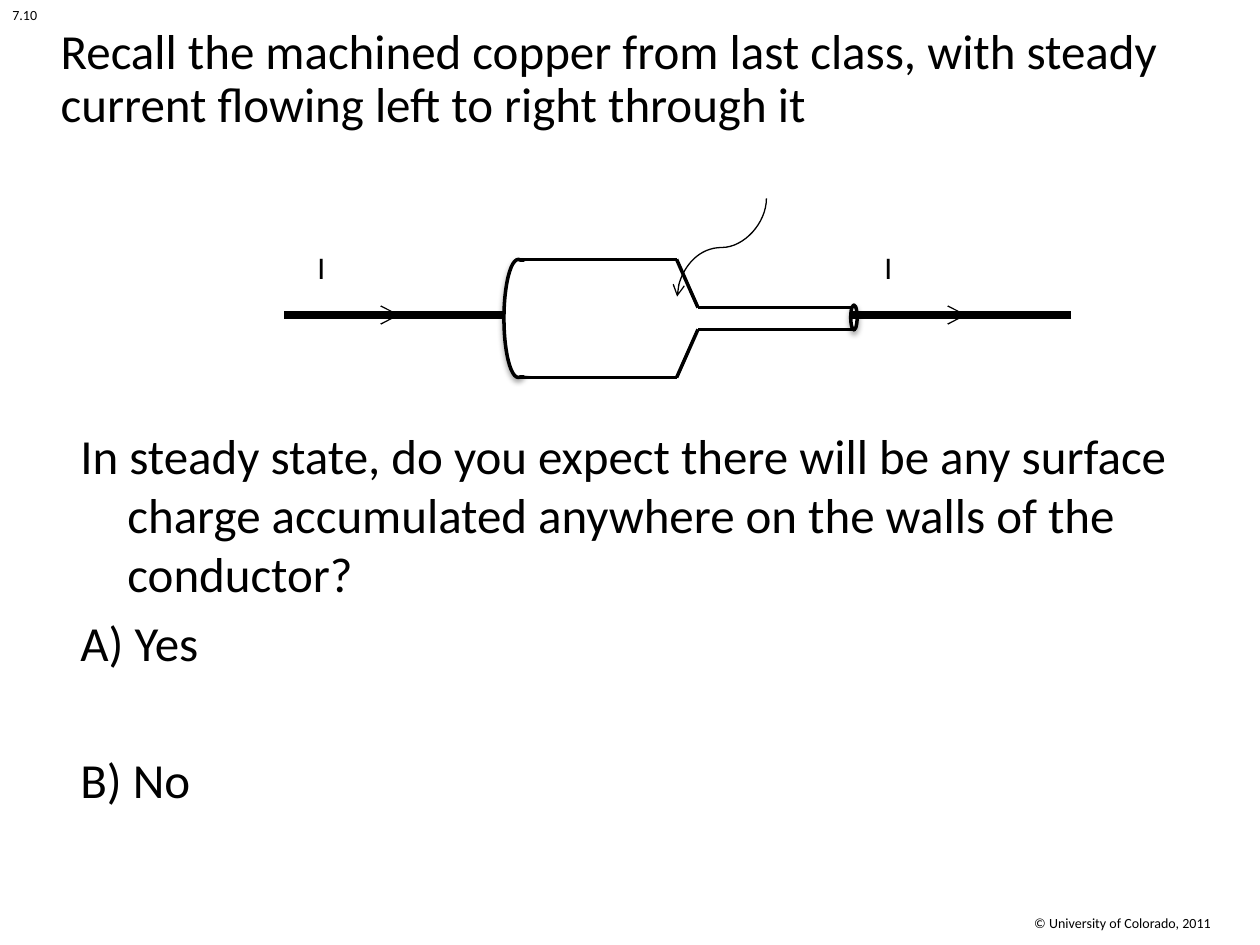
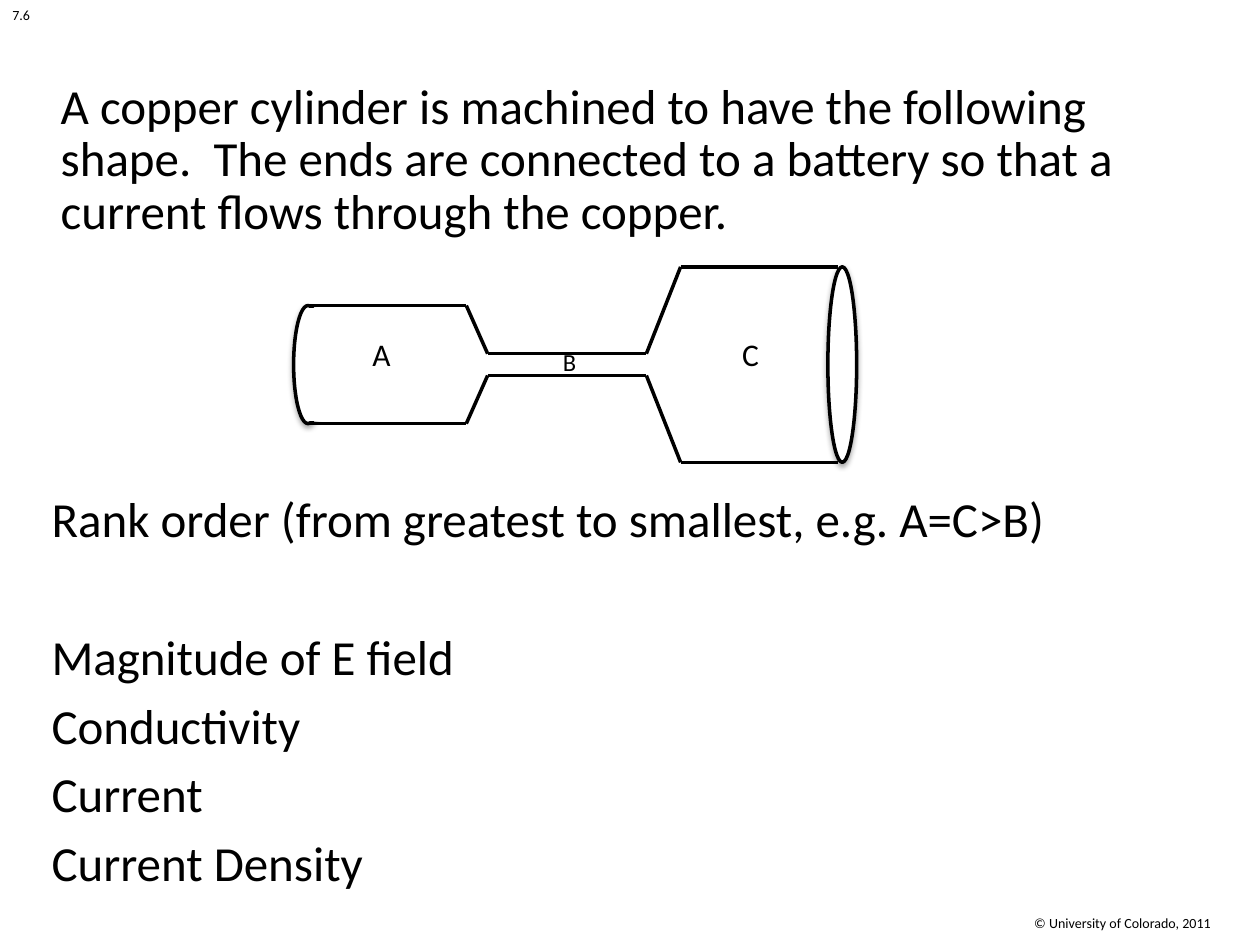
"""Build two physics question slides about current in a machined copper conductor."""
from lxml.etree import SubElement
from pptx import Presentation
from pptx.dml.color import RGBColor
from pptx.enum.shapes import MSO_CONNECTOR, MSO_SHAPE
from pptx.enum.text import MSO_ANCHOR, MSO_AUTO_SIZE, PP_ALIGN
from pptx.oxml.ns import qn
from pptx.util import Cm, Pt

COLORS = {"ink": "000000", "paper": "FFFFFF"}
FONT = "Calibri"
WIDE, NARROW = 1.19, 0.22


def color(name):
    return RGBColor.from_string(COLORS[name])


class Deck:
    def __init__(self):
        self.prs = Presentation()
        self.prs.slide_width, self.prs.slide_height = Cm(25.4), Cm(19.05)

    def page(self, number, title, top):
        self.slide = self.prs.slides.add_slide(self.prs.slide_layouts[5])
        head = self.slide.shapes.title
        head.left, head.top, head.width, head.height = Cm(0.97), Cm(top), Cm(23.5), Cm(2.49)
        frame = head.text_frame
        frame.word_wrap, frame.auto_size = True, MSO_AUTO_SIZE.NONE
        frame.vertical_anchor = MSO_ANCHOR.TOP
        frame.text = title
        para = frame.paragraphs[0]
        para.alignment, para.line_spacing = PP_ALIGN.LEFT, 0.9
        para.space_before = Pt(5.6)
        self.style(para, 28)
        self.text(number, 0, 0, 1.5, 0.61, 8)
        self.text("© University of Colorado, 2011", 20.6, 18.31, 4.8, 0.61, 8)

    def style(self, para, size):
        font = para.font
        font.name, font.size, font.bold = FONT, Pt(size), False
        font.color.rgb = color("ink")

    def text(self, words, x, y, w, h, size):
        frame = self.slide.shapes.add_textbox(Cm(x), Cm(y), Cm(w), Cm(h)).text_frame
        frame.word_wrap = True
        frame.text = words
        for para in frame.paragraphs:
            self.style(para, size)
        return frame

    def body(self, lines, x, y, w, gap):
        frame = self.text("\n".join(lines), x, y, w, 8.81, 28)
        for i, para in enumerate(frame.paragraphs):
            para.space_before = Pt(45 if i == gap else 5.6)
            props = para._p.get_or_add_pPr()
            props.set("marL", str(Cm(0.95)))
            props.set("indent", str(-Cm(0.95)))

    def line(self, x1, y1, x2, y2, width=2, tip=None, kind=MSO_CONNECTOR.STRAIGHT):
        link = self.slide.shapes.add_connector(kind, Cm(x1), Cm(y1), Cm(x2), Cm(y2))
        link.line.width = Pt(width)
        link.line.color.rgb = color("ink")
        props = link._element.spPr
        if tip:
            SubElement(props.find(qn("a:ln")), qn("a:tailEnd"), type="arrow", w=tip, len=tip)
        SubElement(props, qn("a:effectLst"))
        return props

    def curve(self, x1, y1, x2, y2):
        props = self.line(x1, y1, x2, y2, 0.75, "med", MSO_CONNECTOR.CURVE)
        props.find(qn("a:xfrm")).set("rot", str(90 * 60000))

    def shape(self, kind, x, y, w, h, edge, width):
        form = self.slide.shapes.add_shape(kind, Cm(x), Cm(y), Cm(w), Cm(h))
        form.fill.solid()
        form.fill.fore_color.rgb = color("paper")
        form.line.color.rgb = color(edge)
        form.line.width = Pt(width)
        form.shadow.inherit = False
        return form

    def cap(self, x, mid, w, r):
        oval = self.shape(MSO_SHAPE.OVAL, x, mid - r, w, 2 * r, "ink", 2)
        glow = SubElement(
            oval._element.spPr.find(qn("a:effectLst")), qn("a:outerShdw"),
            blurRad=str(Pt(3.1)), dist=str(Pt(1.8)), dir=str(90 * 60000), rotWithShape="0")
        tint = SubElement(glow, qn("a:srgbClr"), val=COLORS["ink"])
        SubElement(tint, qn("a:alpha"), val="35000")

    def pipe(self, mid, points):
        for side in (1, -1):
            for (x1, r1), (x2, r2) in zip(points, points[1:]):
                self.line(x1, mid + side * r1, x2, mid + side * r2)
        x, r = points[0]
        self.cap(x - 0.28, mid, 0.58, r)
        self.shape(MSO_SHAPE.RECTANGLE, x, mid - r + 0.06, 0.66, 2 * r - 0.12, "paper", 0.75)


def charge(deck):
    deck.page("7.10", "Recall the machined copper from last class, with steady "
              "current flowing left to right through it", 0.43)
    deck.body(["In steady state, do you expect there will be any surface charge "
               "accumulated anywhere on the walls of the conductor?",
               "A) Yes", "B) No"], 1.37, 8.46, 23.09, gap=2)
    deck.pipe(6.42, [(10.44, WIDE), (13.64, WIDE), (14.07, NARROW), (17.25, NARROW)])
    deck.cap(17.15, 6.4, 0.13, 0.25)
    deck.curve(13.56, 4.09, 15.54, 5.89)
    for shift in (0, 11.43):
        deck.line(10.16 + shift, 6.35, 5.72 + shift, 6.35, 5)
        deck.text("I", 6.15 + shift, 4.88, 0.89, 1.02, 18)
        deck.line(5.92 + shift, 6.35, 8.05 + shift, 6.35, 0.75, "lg")


def rank(deck):
    deck.page("7.6", "A copper cylinder is machined to have the following shape.  The ends "
              "are connected to a battery so that a current flows through the copper.", 1.52)
    deck.body(["Rank order (from greatest to smallest, e.g. A=C>B)", "Magnitude of E field",
               "Conductivity", "Current", "Current Density"], 0.79, 9.73, 24.56, gap=1)
    mid, large = 7.35, 1.97
    deck.pipe(mid, [(6.2, WIDE), (9.4, WIDE), (9.83, NARROW), (13.03, NARROW),
                    (13.72, large), (16.89, large)])
    deck.cap(16.69, mid, 0.58, large)
    for name, x, y, size in (("A", 7.26, 6.63, 18), ("C", 14.71, 6.63, 18),
                             ("B", 11.1, 6.88, 14)):
        deck.text(name, x, y, 1, 1.02, size)


def main():
    deck = Deck()
    charge(deck)
    rank(deck)
    deck.prs.save("out.pptx")


if __name__ == "__main__":
    main()
